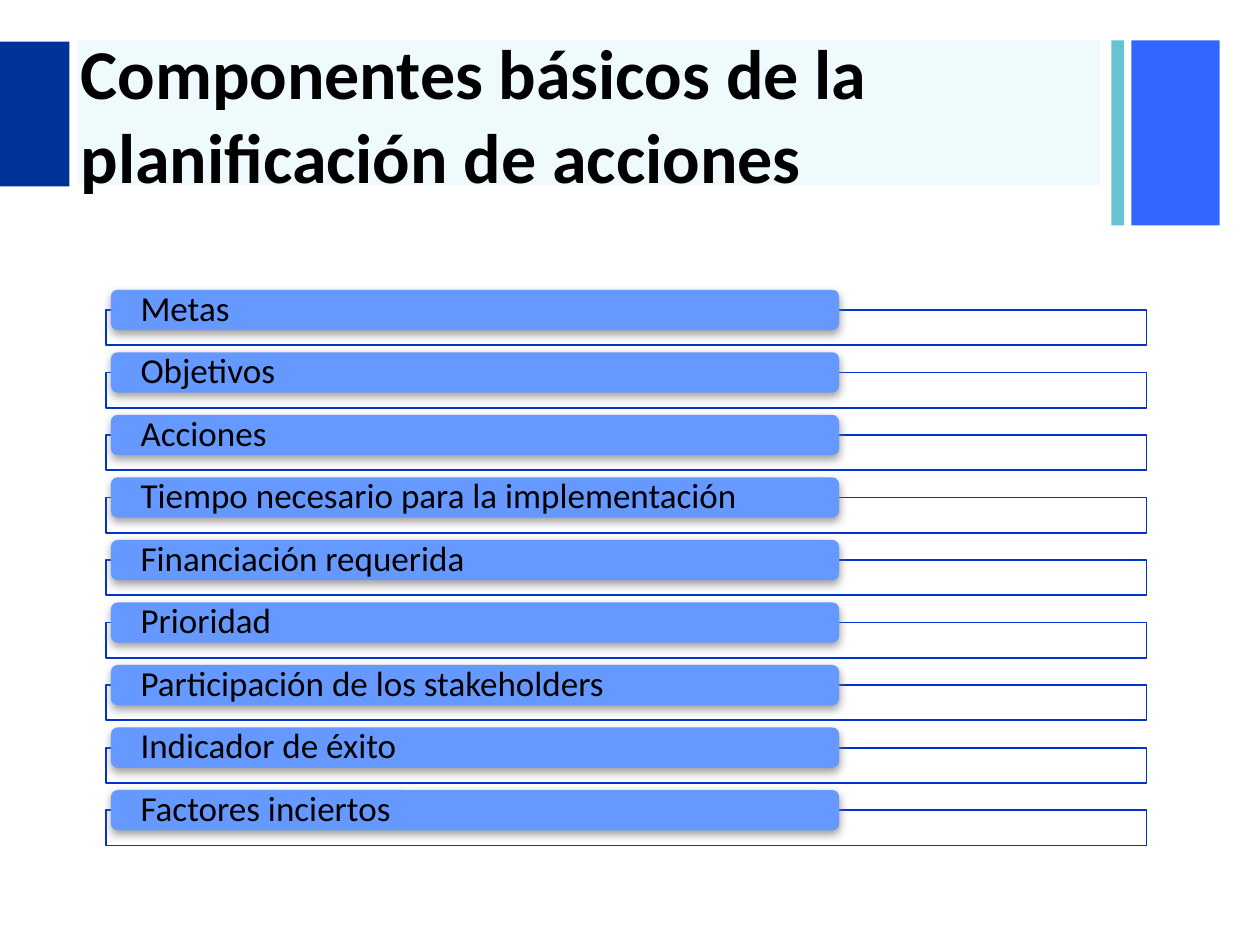
from dataclasses import dataclass

from lxml import etree
from pptx import Presentation
from pptx.dml.color import RGBColor
from pptx.enum.shapes import MSO_SHAPE
from pptx.enum.text import MSO_ANCHOR, MSO_AUTO_SIZE, PP_ALIGN
from pptx.oxml.ns import qn
from pptx.util import Inches, Pt

RECTANGLE = MSO_SHAPE.RECTANGLE
ROUNDED = MSO_SHAPE.ROUNDED_RECTANGLE
MIDDLE = MSO_ANCHOR.MIDDLE
LEFT = PP_ALIGN.LEFT
TITLE_ONLY = 5


@dataclass(frozen=True)
class Theme:
    font: str = "Calibri"
    title_size: int = 40
    label_size: int = 20
    text: str = "000000"
    navy: str = "003399"
    blue: str = "3366FF"
    teal: str = "65C4D2"
    title_tint: str = "14C5D0"
    bar: str = "6699FF"
    frame_fill: str = "FFFFFF"
    frame_line: str = "0033CC"
    shadow: str = "808080"


@dataclass(frozen=True)
class Box:
    left: float
    top: float
    width: float
    height: float

    def lengths(self):
        return tuple(map(Inches, (self.left, self.top, self.width, self.height)))


@dataclass(frozen=True)
class Band:
    box: Box
    color: str
    opacity: int = 100


THEME = Theme()
TITLE = "Componentes básicos de la planificación de acciones"
TITLE_BOX = Box(0.54, 0.34, 8.27, 1.12)
BANDS = (
    Band(Box(8.98, 0.32, 0.7, 1.47), THEME.blue),
    Band(Box(8.82, 0.32, 0.1, 1.47), THEME.teal),
    Band(Box(0.61, 0.32, 8.12, 1.15), THEME.title_tint, 7),
    Band(Box(0, 0.33, 0.55, 1.15), THEME.navy),
)
COMPONENTS = (
    "Metas",
    "Objetivos",
    "Acciones",
    "Tiempo necesario para la implementación",
    "Financiación requerida",
    "Prioridad",
    "Participación de los stakeholders",
    "Indicador de éxito",
    "Factores inciertos",
)
FIRST_BAR_TOP, LAST_BAR_TOP = 2.3, 6.27
ROW_PITCH = (LAST_BAR_TOP - FIRST_BAR_TOP) / (len(COMPONENTS) - 1)
FRAME_OFFSET = 0.16


def add_filled(slide, kind, box: Box, color: str, opacity: int = 100):
    """Add an unlined, unshadowed shape; opacity is a percentage."""
    shape = slide.shapes.add_shape(kind, *box.lengths())
    shape.shadow.inherit = False
    shape.fill.solid()
    shape.fill.fore_color.rgb = RGBColor.from_string(color)
    shape.line.fill.background()
    if opacity < 100:
        fill_color = shape.element.spPr.find(qn("a:solidFill"))[0]
        etree.SubElement(fill_color, qn("a:alpha"), val=str(opacity * 1000))
    return shape


def add_drop_shadow(shape) -> None:
    effects = shape.element.spPr.find(qn("a:effectLst"))
    shadow = etree.SubElement(
        effects, qn("a:outerShdw"), blurRad=str(Pt(5)), dist=str(Pt(2)),
        dir=str(90 * 60000), rotWithShape="0")
    color = etree.SubElement(shadow, qn("a:srgbClr"), val=THEME.shadow)
    etree.SubElement(color, qn("a:alpha"), val="75000")


def write_text(shape, text: str, size: int, bold: bool = False):
    frame = shape.text_frame
    frame.text = text
    frame.word_wrap = True
    frame.auto_size = MSO_AUTO_SIZE.NONE
    frame.vertical_anchor = MIDDLE
    paragraph = frame.paragraphs[0]
    paragraph.alignment = LEFT
    paragraph.font.name = THEME.font
    paragraph.font.size = Pt(size)
    paragraph.font.bold = bold
    paragraph.font.color.rgb = RGBColor.from_string(THEME.text)
    return frame


def add_title(slide) -> None:
    """Fill the title and bring it in front of the bands drawn so far."""
    title = slide.shapes.title
    title.left, title.top, title.width, title.height = TITLE_BOX.lengths()
    write_text(title, TITLE, THEME.title_size, bold=True)
    title.element.getparent().append(title.element)


def add_component(slide, label: str, top: float) -> None:
    frame_box = Box(0.84, top + FRAME_OFFSET, 8.26, 0.28)
    frame = add_filled(slide, RECTANGLE, frame_box, THEME.frame_fill, 90)
    frame.line.color.rgb = RGBColor.from_string(THEME.frame_line)
    frame.line.width = Pt(1)

    bar = add_filled(slide, ROUNDED, Box(0.88, top, 5.78, 0.32), THEME.bar)
    add_drop_shadow(bar)
    text_frame = write_text(bar, label, THEME.label_size)
    text_frame.margin_left = text_frame.margin_right = Inches(0.22)
    text_frame.margin_top = text_frame.margin_bottom = 0
    text_frame.paragraphs[0].line_spacing = 0.9


def main() -> None:
    presentation = Presentation()
    presentation.slide_width = Inches(10)
    presentation.slide_height = Inches(7.5)
    slide = presentation.slides.add_slide(presentation.slide_layouts[TITLE_ONLY])
    for band in BANDS:
        add_filled(slide, RECTANGLE, band.box, band.color, band.opacity)
    add_title(slide)
    for row, label in enumerate(COMPONENTS):
        add_component(slide, label, FIRST_BAR_TOP + row * ROW_PITCH)
    presentation.save("out.pptx")


if __name__ == "__main__":
    main()
